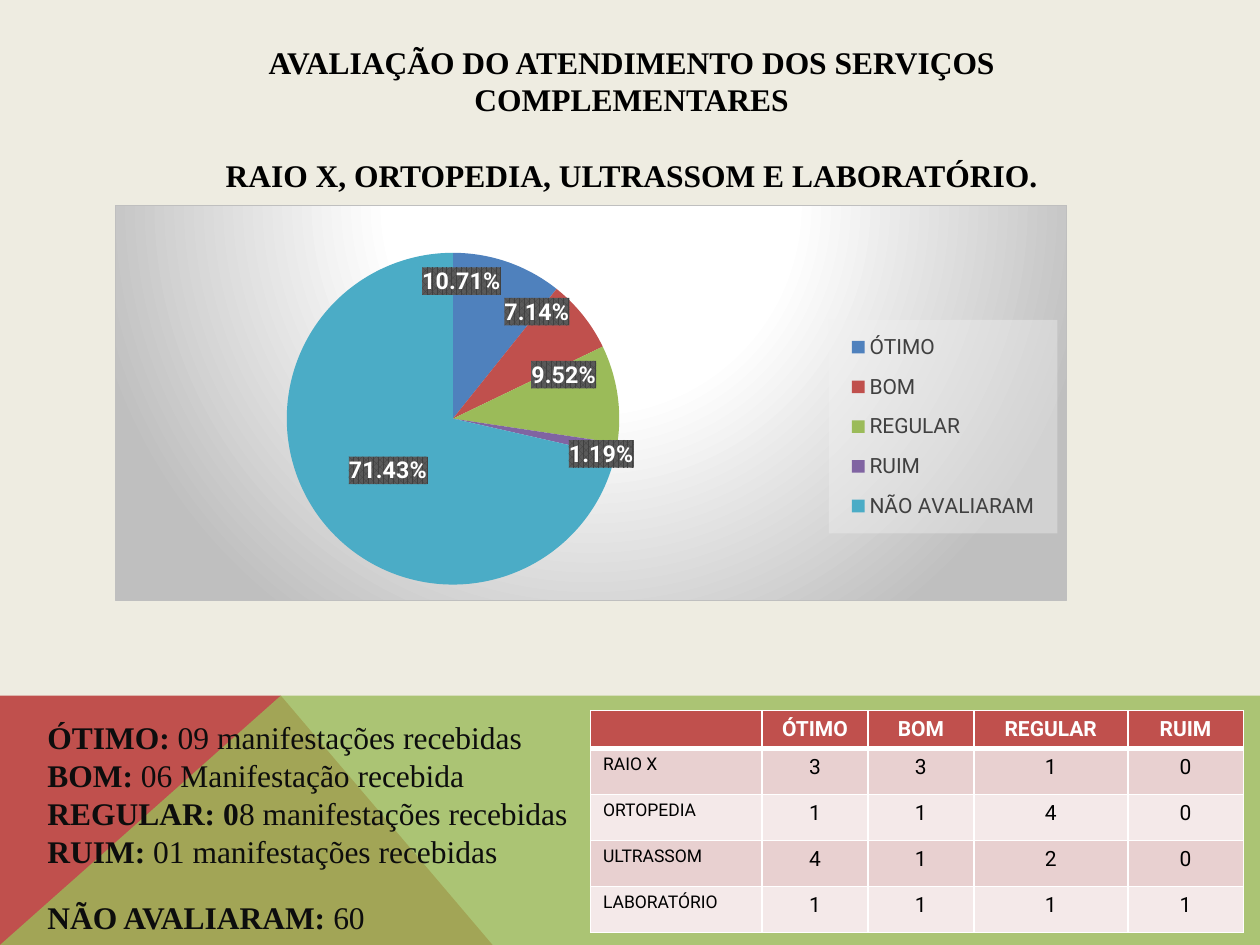
from lxml import etree
from pptx import Presentation
from pptx.chart.data import CategoryChartData as Data
from pptx.dml.color import RGBColor as RGB
from pptx.enum.chart import XL_CHART_TYPE as Kind, XL_LEGEND_POSITION as Side
from pptx.enum.text import MSO_ANCHOR as Anchor, MSO_AUTO_SIZE as Fit, PP_ALIGN as Align
from pptx.oxml import parse_xml
from pptx.oxml.ns import nsdecls, qn
from pptx.util import Pt

CREAM = RGB(0xEE, 0xEC, 0xE1)
BLUE = RGB(0x4F, 0x81, 0xBD)
RED = RGB(0xC0, 0x50, 0x4D)
GREEN = RGB(0x9B, 0xBB, 0x59)
PURPLE = RGB(0x80, 0x64, 0xA2)
TEAL = RGB(0x4B, 0xAC, 0xC6)
BLACK = RGB(0, 0, 0)
INK = RGB(0x0D, 0x0D, 0x0D)
GRAY = RGB(0x40, 0x40, 0x40)
WHITE = RGB(0xFF, 0xFF, 0xFF)
ROSE = RGB(0xE8, 0xD0, 0xD0)
PALE = RGB(0xF4, 0xE9, 0xE9)
SERIF, SANS = "Times New Roman", "Roboto"


def style(font, name, size, color, bold=None):
    font.name, font.size, font.bold = name, Pt(size), bold
    font.color.rgb = color


def xml(tag, body):
    return parse_xml(f"<{tag} {nsdecls('c', 'a')}>{body}</{tag}>")


prs = Presentation()
prs.slide_width, prs.slide_height = Pt(720), Pt(540)
slide = prs.slides.add_slide(prs.slide_layouts[5])
slide.background.fill.solid()
slide.background.fill.fore_color.rgb = CREAM
shapes = slide.shapes

TOP, PEAK = 397.5, 160.5
bands = [
    (RED, [(0, 540), (0, TOP), (PEAK, TOP), (281.5, 540)]),
    (GREEN, [(0, 540), (PEAK, TOP), (720, TOP), (720, 540)]),
]
for color, dots in bands:
    dots = [(Pt(x), Pt(y)) for x, y in dots]
    form = shapes.build_freeform(*dots[0])
    form.add_line_segments(dots[1:], close=True)
    band = form.convert_to_shape()
    band.shadow.inherit = False
    band.fill.solid()
    band.fill.fore_color.rgb = color
    band.line.fill.background()
tint = band.element.spPr.find(qn("a:solidFill"))[0]
etree.SubElement(tint, qn("a:alpha")).set("val", "80000")

title = shapes.title
title.left, title.top, title.width, title.height = Pt(65), Pt(29), Pt(592), Pt(77)
frame = title.text_frame
frame.auto_size, frame.vertical_anchor = Fit.NONE, Anchor.MIDDLE
frame.text = (
    "AVALIAÇÃO DO ATENDIMENTO DOS SERVIÇOS COMPLEMENTARES\n"
    "RAIO X, ORTOPEDIA, ULTRASSOM E LABORATÓRIO."
)
for para in frame.paragraphs:
    para.alignment = Align.CENTER
    style(para.font, SERIF, 18, BLACK, True)
para.space_before = Pt(21.5)

slices = [
    ("ÓTIMO", 10.71, BLUE, (-0.02, -0.15)),
    ("BOM", 7.14, RED, (0.02, -0.14)),
    ("REGULAR", 9.52, GREEN, (0.03, -0.08)),
    ("RUIM", 1.19, PURPLE, (0.07, 0.05)),
    ("NÃO AVALIARAM", 71.43, TEAL, None),
]
data = Data()
data.categories = [row[0] for row in slices]
data.add_series("Series 1", [row[1] for row in slices])
chart = shapes.add_chart(Kind.PIE, Pt(65.5), Pt(117), Pt(544.5), Pt(226.5), data).chart
chart.has_title = False
style(chart.font, SANS, 10, BLACK)
chart.has_legend = True
legend = chart.legend
legend.position, legend.include_in_layout = Side.RIGHT, False
style(legend.font, SANS, 12, GRAY)

plot = chart.plots[0]
plot.vary_by_categories = True
look = (
    '<c:numFmt formatCode="0.00&quot;%&quot;" sourceLinked="0"/>'
    '<c:spPr><a:pattFill prst="pct75"><a:fgClr><a:srgbClr val="404040"/></a:fgClr>'
    '<a:bgClr><a:srgbClr val="595959"/></a:bgClr></a:pattFill></c:spPr>'
    '<c:txPr><a:bodyPr/><a:p><a:pPr><a:defRPr sz="1330" b="1"><a:solidFill>'
    f'<a:srgbClr val="{WHITE}"/></a:solidFill><a:latin typeface="{SANS}"/>'
    '</a:defRPr></a:pPr><a:endParaRPr/></a:p></c:txPr><c:dLblPos val="ctr"/>'
    '<c:showLegendKey val="0"/><c:showVal val="1"/><c:showCatName val="0"/>'
    '<c:showSerName val="0"/><c:showPercent val="0"/><c:showBubbleSize val="0"/>'
)
labels = ""
for i, (name, value, color, shift) in enumerate(slices):
    fill = plot.series[0].points[i].format.fill
    fill.solid()
    fill.fore_color.rgb = color
    if shift:
        labels += (
            f'<c:dLbl><c:idx val="{i}"/><c:layout><c:manualLayout><c:x val="{shift[0]}"/>'
            f'<c:y val="{shift[1]}"/></c:manualLayout></c:layout>{look}</c:dLbl>'
        )
root = chart.element
root.find(".//" + qn("c:cat")).addprevious(
    xml("c:dLbls", labels + look + '<c:showLeaderLines val="0"/>'))

areas = [
    ("c:plotArea", '<c:layoutTarget val="inner"/>', (0.18, 0.12, 0.35, 0.84)),
    ("c:legend", "", (0.75, 0.29, 0.24, 0.54)),
]
for tag, aim, box in areas:
    area = root.find(".//" + qn(tag))
    for old in area.findall(qn("c:layout")):
        area.remove(old)
    body = aim + '<c:xMode val="edge"/><c:yMode val="edge"/>'
    body += "".join(f'<c:{key} val="{val}"/>' for key, val in zip("xywh", box))
    spot = xml("c:layout", f"<c:manualLayout>{body}</c:manualLayout>")
    if tag == "c:legend":
        area.find(qn("c:legendPos")).addnext(spot)
    else:
        area.insert(0, spot)
area.find(qn("c:txPr")).addprevious(xml(
    "c:spPr", '<a:solidFill><a:srgbClr val="F2F2F2"><a:alpha val="39000"/></a:srgbClr></a:solidFill>'))
stops = "".join(
    f'<a:gs pos="{pos}000"><a:srgbClr val="{tone}"/></a:gs>'
    for pos, tone in [(0, "FFFFFF"), (39, "FFFFFF"), (100, "BFBFBF")])
root.find(qn("c:chart")).addnext(xml(
    "c:spPr", f'<a:gradFill><a:gsLst>{stops}</a:gsLst><a:path path="circle">'
    '<a:fillToRect l="50000" t="-80000" r="50000" b="180000"/></a:path></a:gradFill>'
    '<a:ln w="9525"><a:solidFill><a:srgbClr val="BFBFBF"/></a:solidFill></a:ln>'))

frame = shapes.add_textbox(Pt(20), Pt(407), Pt(332), Pt(132)).text_frame
frame.word_wrap = True
notes = [
    ("ÓTIMO: ", "09 manifestações recebidas"),
    ("BOM: ", "06 Manifestação recebida"),
    ("REGULAR: 0", "8 manifestações recebidas"),
    ("RUIM: ", "01 manifestações recebidas"),
    ("NÃO AVALIARAM: ", "60"),
]
for i, (head, rest) in enumerate(notes):
    para = frame.add_paragraph() if i else frame.paragraphs[0]
    style(para.font, SERIF, 18, INK)
    for text, bold in [(head, True), (rest, False)]:
        run = para.add_run()
        run.text, run.font.bold = text, bold
para.space_before = Pt(16)

rows = [
    ("", "ÓTIMO", "BOM", "REGULAR", "RUIM"),
    ("RAIO X", 3, 3, 1, 0),
    ("ORTOPEDIA", 1, 1, 4, 0),
    ("ULTRASSOM", 4, 1, 2, 0),
    ("LABORATÓRIO", 1, 1, 1, 1),
]
table = shapes.add_table(5, 5, Pt(337.5), Pt(406), Pt(373), Pt(126.5)).table
for col, wide in zip(table.columns, [98, 60.5, 60.5, 88, 66]):
    col.width = Pt(wide)
for r, row in enumerate(rows):
    table.rows[r].height = Pt(26.3 if r else 21.3)
    for c, text in enumerate(row):
        cell = table.cell(r, c)
        cell.text = str(text)
        cell.fill.solid()
        cell.fill.fore_color.rgb = (ROSE if r % 2 else PALE) if r else RED
        para = cell.text_frame.paragraphs[0]
        para.alignment = Align.CENTER if c else Align.LEFT
        style(para.font, SANS, 10 if r and not c else 12, BLACK if r else WHITE, not r)
        for n, side in enumerate("LRTB"):
            thick = 3 if (r, side) in [(0, "B"), (1, "T")] else 1
            line = xml(f"a:ln{side}", f'<a:solidFill><a:srgbClr val="{WHITE}"/></a:solidFill>')
            line.set("w", str(Pt(thick)))
            cell._tc.tcPr.insert(n, line)

prs.save("out.pptx")
